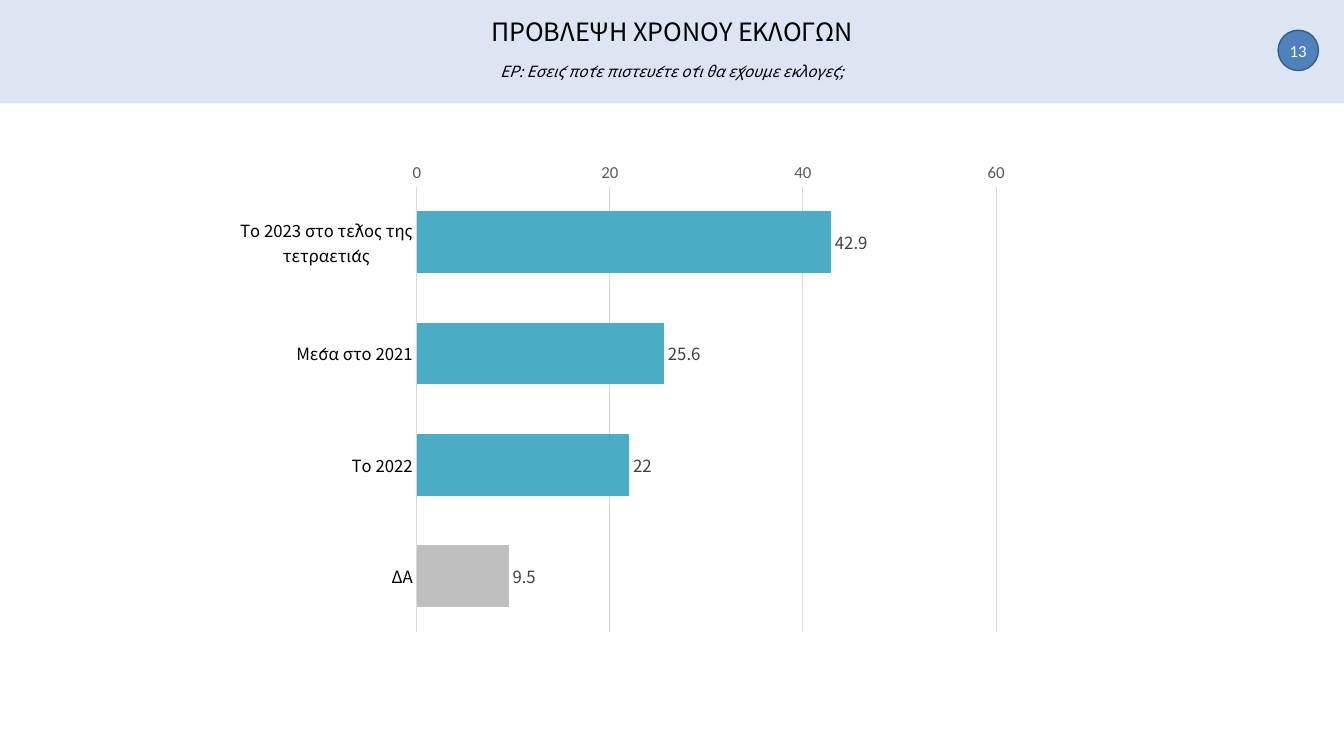
from lxml import etree
from pptx import Presentation
from pptx.chart.data import CategoryChartData
from pptx.dml.color import RGBColor
from pptx.enum.chart import XL_AXIS_CROSSES, XL_CHART_TYPE, XL_LABEL_POSITION, XL_TICK_MARK
from pptx.enum.shapes import MSO_SHAPE
from pptx.enum.text import MSO_ANCHOR, PP_ALIGN
from pptx.oxml.ns import qn
from pptx.util import Inches, Pt

RECTANGLE, OVAL = MSO_SHAPE.RECTANGLE, MSO_SHAPE.OVAL
CENTER, MIDDLE = PP_ALIGN.CENTER, MSO_ANCHOR.MIDDLE
BAR = XL_CHART_TYPE.BAR_CLUSTERED
OUTSIDE_END = XL_LABEL_POSITION.OUTSIDE_END
NO_TICK = XL_TICK_MARK.NONE
AT_MAXIMUM = XL_AXIS_CROSSES.MAXIMUM

WIDTH, HEIGHT = Inches(13.33), Inches(7.5)
HEADER_SHARE = 0.137
LATIN, GREEK = "Calibri", "Noto Sans CJK TC"
TEAL, GREY, GRID = "4BACC6", "BFBFBF", "D9D9D9"
FORECAST = {
    "Το 2023 στο τέλος της τετραετίας": (42.9, TEAL),
    "Μέσα στο 2021": (25.6, TEAL),
    "Το 2022": (22, TEAL),
    "ΔΑ": (9.5, GREY),
}


def color(hex_value):
    return RGBColor.from_string(hex_value)


def area(left, top, width, height):
    return (round(left * WIDTH), round(top * HEIGHT),
            round(width * WIDTH), round(height * HEIGHT))


def style(font, size, name, hex_value, italic=False):
    font.size, font.name, font.italic = Pt(size), name, italic
    font.color.rgb = color(hex_value)


def write(frame, text, size=12, name=GREEK, hex_value="000000",
          italic=False, before=None, spacing=None):
    first = frame.paragraphs[0]
    paragraph = frame.add_paragraph() if first.runs else first
    paragraph.alignment = CENTER
    if before is not None:
        paragraph.space_before = Pt(before)
    if spacing is not None:
        paragraph.line_spacing = spacing
    run = paragraph.add_run()
    run.text = text
    style(run.font, size, name, hex_value, italic)


def add_block(slide, preset, place, fill, outline=None):
    block = slide.shapes.add_shape(preset, *place)
    block.shadow.inherit = False
    block.fill.solid()
    block.fill.fore_color.rgb = color(fill)
    if outline:
        block.line.color.rgb = color(outline)
        block.line.width = Pt(1)
    else:
        block.line.fill.background()
    return block


def add_page_badge(slide, number):
    diameter = Inches(0.4)
    place = (round(WIDTH * 0.951), round(HEIGHT * 0.04), diameter, diameter)
    frame = add_block(slide, OVAL, place, "4F81BD", "385D8A").text_frame
    frame.margin_left = frame.margin_right = frame.margin_top = frame.margin_bottom = 0
    frame.word_wrap = False
    frame.vertical_anchor = MIDDLE
    write(frame, number, name=LATIN, hex_value="FFFFFF")


def add_heading(slide, title, question):
    frame = slide.shapes.add_textbox(*area(0.069, 0.008, 0.862, 0.117)).text_frame
    frame.word_wrap = True
    frame.vertical_anchor = MIDDLE
    write(frame, title, size=18, spacing=0.9)
    write(frame, question, size=11, italic=True, before=12, spacing=0.9)


def place_plot(chart, **shares):
    plot_area = chart.element.find(".//" + qn("c:plotArea"))
    for layout in plot_area.findall(qn("c:layout")):
        plot_area.remove(layout)
    layout = etree.Element(qn("c:layout"))
    manual = etree.SubElement(layout, qn("c:manualLayout"))
    settings = {"layoutTarget": "inner", "xMode": "edge", "yMode": "edge", **shares}
    for tag, value in settings.items():
        etree.SubElement(manual, qn("c:" + tag)).set("val", str(value))
    plot_area.insert(0, layout)


def format_axis(axis, name, hex_value):
    axis.major_tick_mark = axis.minor_tick_mark = NO_TICK
    style(axis.tick_labels.font, 12, name, hex_value)


def format_axes(chart):
    answers, percent = chart.category_axis, chart.value_axis
    format_axis(answers, GREEK, "000000")
    answers.reverse_order = True
    answers.crosses = AT_MAXIMUM
    answers.has_major_gridlines = False
    format_axis(percent, LATIN, "595959")
    percent.minimum_scale, percent.maximum_scale, percent.major_unit = 0, 60, 20
    percent.has_major_gridlines = True
    percent.format.line.fill.background()
    for line in (answers.format.line, percent.major_gridlines.format.line):
        line.color.rgb = color(GRID)
        line.width = Pt(0.75)


def format_bars(plot):
    plot.gap_width = 80
    plot.vary_by_categories = False
    series = plot.series[0]
    for index, (_, bar_color) in enumerate(FORECAST.values()):
        fill = series.points[index].format.fill
        fill.solid()
        fill.fore_color.rgb = color(bar_color)
    labels = series.data_labels
    labels.show_value = True
    labels.position = OUTSIDE_END
    style(labels.font, 12, GREEK, "404040")


def add_forecast_chart(slide):
    data = CategoryChartData()
    data.categories = list(FORECAST)
    data.add_series("Series 1", [share for share, _ in FORECAST.values()])
    place = area(0.1665, 0.2093, 0.6414, 0.7013)
    chart = slide.shapes.add_chart(BAR, *place, data).chart
    chart.has_title = chart.has_legend = False
    style(chart.font, 10, LATIN, "000000")
    format_axes(chart)
    format_bars(chart.plots[0])
    place_plot(chart, x=0.224, y=0.054, w=0.672, h=0.839)


def main():
    deck = Presentation()
    deck.slide_width, deck.slide_height = WIDTH, HEIGHT
    slide = deck.slides.add_slide(deck.slide_layouts[6])
    add_block(slide, RECTANGLE, area(0, 0, 1, HEADER_SHARE), "DCE6F2")
    add_page_badge(slide, "13")
    add_heading(slide, "ΠΡΟΒΛΕΨΗ ΧΡΟΝΟΥ ΕΚΛΟΓΩΝ",
                "ΕΡ: Εσείς πότε πιστεύετε ότι θα έχουμε εκλογές;")
    add_forecast_chart(slide)
    deck.save("out.pptx")


if __name__ == "__main__":
    main()
